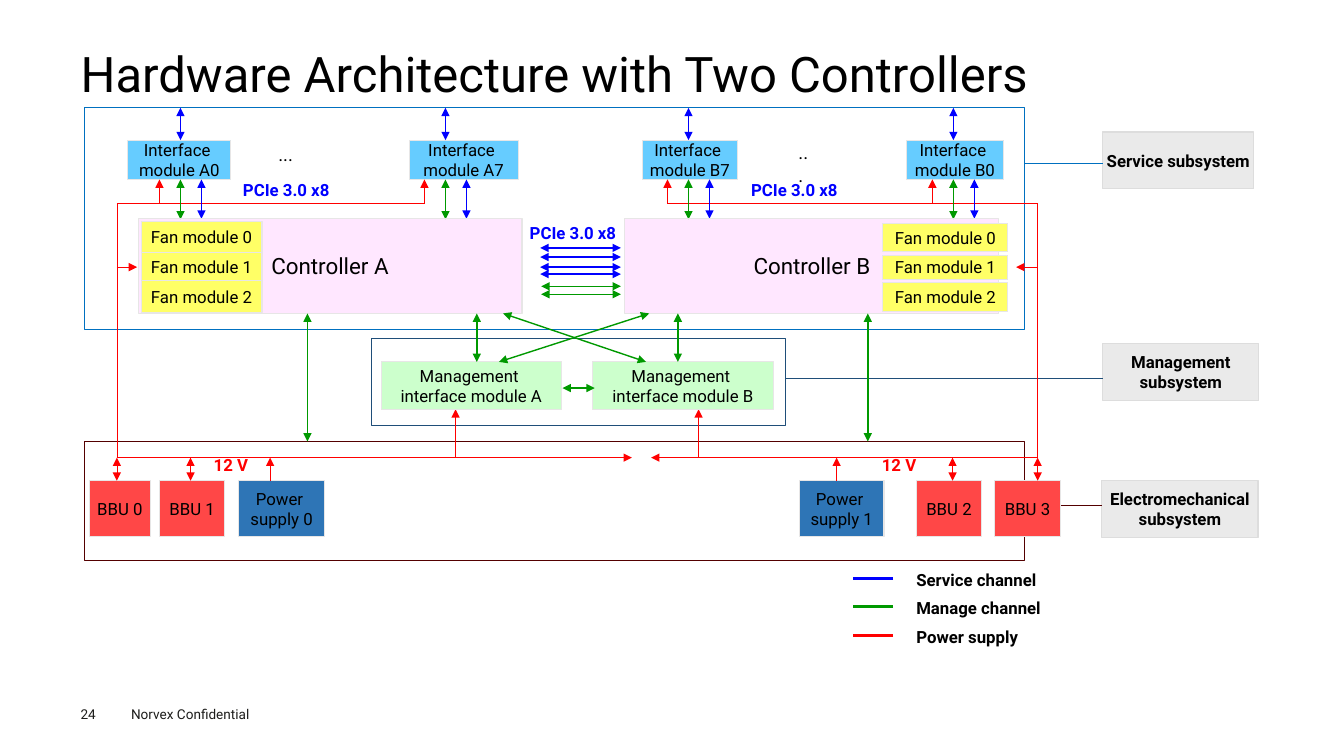
"""Build the slide on hardware architecture with two controllers."""
from lxml.etree import SubElement
from pptx import Presentation
from pptx.dml.color import RGBColor
from pptx.enum.shapes import MSO_CONNECTOR, MSO_SHAPE
from pptx.enum.text import MSO_ANCHOR, PP_ALIGN
from pptx.oxml.ns import qn
from pptx.util import Pt

BLUE, GREEN, RED = "0000FF", "009900", "FF0000"
SERVICE, MANAGEMENT, ELECTRO = "0070C0", "1F4E79", "540000"
TIP = ("tailEnd",)
BOTH = ("headEnd", "tailEnd")


def rgb(value):
    return RGBColor.from_string(value)


class Diagram:
    font_format = {"name": "Roboto", "size": 12, "bold": False}

    def __init__(self, slide):
        self.shapes = slide.shapes

    def fill_text(self, frame, text, color="000000", align=PP_ALIGN.CENTER, spacing=1,
                  anchor=MSO_ANCHOR.MIDDLE, inset=(0, 0), **font_format):
        side, end = inset
        frame_format = {"word_wrap": True, "vertical_anchor": anchor,
                        "margin_left": Pt(side), "margin_right": Pt(side),
                        "margin_top": Pt(end), "margin_bottom": Pt(end)}
        for name, value in frame_format.items():
            setattr(frame, name, value)
        for index, wording in enumerate(text.split("\n")):
            paragraph = frame.paragraphs[0] if index == 0 else frame.add_paragraph()
            paragraph.alignment = align
            paragraph.line_spacing = spacing
            run = paragraph.add_run()
            run.text = wording
            for name, value in {**self.font_format, **font_format}.items():
                setattr(run.font, name, Pt(value) if name == "size" else value)
            run.font.color.rgb = rgb(color)

    def box(self, left, top, width, height, text="", fill=None, line="E7E6E6",
            weight=0.75, alpha=None, **text_format):
        block = self.shapes.add_shape(MSO_SHAPE.RECTANGLE, Pt(left), Pt(top),
                                      Pt(width), Pt(height))
        block.shadow.inherit = False
        block.line.color.rgb = rgb(line)
        block.line.width = Pt(weight)
        if fill:
            block.fill.solid()
            block.fill.fore_color.rgb = rgb(fill)
        else:
            block.fill.background()
        if alpha:
            tone = block._element.spPr.find(qn("a:solidFill"))[0]
            SubElement(tone, qn("a:alpha"), val=str(alpha * 1000))
        if text:
            self.fill_text(block.text_frame, text, **text_format)

    def text(self, left, top, width, height, text, **text_format):
        label = self.shapes.add_textbox(Pt(left), Pt(top), Pt(width), Pt(height))
        self.fill_text(label.text_frame, text, **text_format)

    def line(self, x1, y1, x2, y2, color, weight=0.5, ends=()):
        link = self.shapes.add_connector(MSO_CONNECTOR.STRAIGHT,
                                         Pt(x1), Pt(y1), Pt(x2), Pt(y2))
        link.line.color.rgb = rgb(color)
        link.line.width = Pt(weight)
        outline = link._element.spPr.find(qn("a:ln"))
        for end in ends:
            SubElement(outline, qn(f"a:{end}"), type="triangle")
        SubElement(link._element.spPr, qn("a:effectLst"))


def add_frames(diagram):
    frames = [(60.5, 77, 671, 158.4, SERVICE), (265, 242, 296, 62, MANAGEMENT),
              (60.5, 315.4, 671, 85, ELECTRO)]
    for left, top, width, height, color in frames:
        diagram.box(left, top, width, height, line=color, weight=0.5)
    subsystems = [
        ("Service subsystem", 787.7, 94.3, 108, 116.6, 731.5, SERVICE),
        ("Management\nsubsystem", 787.7, 245.5, 111.6, 270, 561, MANAGEMENT),
        ("Electromechanical subsystem", 787, 343.4, 111.6, 360.7, 757.4, ELECTRO)]
    for name, left, top, width, link_y, link_end, color in subsystems:
        diagram.box(left, top, width, 40.7, name, "EAEAEA", "DDDDDD", bold=True)
        diagram.line(left, link_y, link_end, link_y, color)


def add_power(diagram):
    bus, top_bus = 326.9, 145.4
    for riser, inner, feed_end, control_tip in [(83.5, 451.4, 303.1, 97.9),
                                                (741.2, 465.1, 476.6, 725.8)]:
        diagram.line(riser, bus, inner, bus, RED, ends=TIP)
        diagram.line(riser, bus, riser, top_bus, RED)
        diagram.line(riser, top_bus, feed_end, top_bus, RED)
        diagram.line(riser, 190.8, control_tip, 190.8, RED, ends=TIP)
    for feed in (325.4, 499):
        diagram.line(feed, bus, feed, 292.3, RED, ends=TIP)
    units = [("BBU 0", 64.1, 43.2, 83.5), ("BBU 1", 113.8, 46.8, 136.1),
             ("Power \nsupply 0", 170.6, 61.2, 193),
             ("Power \nsupply 1", 571, 60.5, 597.6),
             ("BBU 2", 654.5, 46.8, 680.4), ("BBU 3", 710.6, 46.8, 741.2)]
    for name, left, width, riser in units:
        battery = name.startswith("BBU")
        diagram.box(left, 343.4, width, 39.6, name,
                    "FF4747" if battery else "2E75B6", inset=(2.9, 5))
        diagram.line(riser, 343.4, riser, bus, RED, ends=BOTH if battery else TIP)


def add_controllers(diagram):
    sides = [("Controller A", 98.6, 274.3, 100.8, 86.4, 190.5, (22.3, 20.2, 22.3)),
             ("Controller B", 446.4, 267.1, 630.7, 89.3, 190.9, (20.2, 17.3, 20.2))]
    for name, left, width, fan_left, fan_width, middle, heights in sides:
        diagram.box(left, 156.2, width, 67.7, name, "FFCCFF", alpha=46, size=16)
        for fan in (0, 2, 1):
            top = middle + 21.3 * (fan - 1) - heights[fan] / 2
            diagram.box(fan_left, top, fan_width, heights[fan], f"Fan module {fan}",
                        "FFFF66", inset=(2.9, 5))
    for y in (177.1, 183.6, 190.8, 195.8):
        diagram.line(443.5, y, 385.9, y, BLUE, 1, BOTH)
    for y in (204.5, 210.2):
        diagram.line(443.5, y, 386.6, y, GREEN, 1, BOTH)


def add_interfaces(diagram):
    modules = [("A0", 91.4, 73.4, 128.9), ("A7", 292.3, 77.8, 318.2),
               ("B7", 458.6, 68.4, 491.8), ("B0", 647.3, 69.8, 681)]
    offset = 15
    for name, left, width, port in modules:
        diagram.box(left, 100.1, width, 28.1, f"Interface \nmodule {name}", "66CCFF")
        diagram.line(port, 77, port, 100.1, BLUE, ends=BOTH)
        diagram.line(port, 156.7, port, 128.2, GREEN, 1, BOTH)
        diagram.line(port + offset, 128.2, port + offset, 156.2, BLUE, ends=BOTH)
        diagram.line(port - offset, 145.4, port - offset, 128.2, RED, ends=TIP)


def add_management(diagram):
    for name, left in (("A", 272.2), ("B", 423.4)):
        diagram.box(left, 258.5, 128.9, 33.8, f"Management \ninterface module {name}",
                    "CCFFCC", inset=(0, 5))
    links = [(219.6, 315.4, 219.6, 223.9), (619.9, 315.4, 619.9, 223.9),
             (340.6, 258.5, 340.6, 223.9), (484.2, 258.5, 484.2, 223.9),
             (356.4, 258.5, 463.7, 223.9), (461.5, 258.5, 359.3, 223.9),
             (401.8, 277.2, 424.8, 277.2)]
    for link in links:
        diagram.line(*link, GREEN, 1, BOTH)


def add_labels(diagram):
    labels = [("PCIe 3.0 x8", 157.7, 118.1, 93.6, BLUE, 1.4),
              ("PCIe 3.0 x8", 520.6, 118.1, 93.6, BLUE, 1.4),
              ("PCIe 3.0 x8", 363.6, 154.8, 91.4, BLUE, 1),
              ("12 V", 142.6, 315, 44.6, RED, 1.4),
              ("12 V", 615.6, 315, 53.3, RED, 1.4)]
    for wording, left, top, width, color, spacing in labels:
        diagram.text(left, top, width, 22.3, wording, color=color, spacing=spacing,
                     anchor=MSO_ANCHOR.TOP, inset=(0, 4.3), bold=True)
    for left, top, width in ((189.4, 97.2, 41.8), (560.9, 95.8, 27.4)):
        diagram.text(left, top, width, 25.9, "...", align=PP_ALIGN.LEFT,
                     anchor=MSO_ANCHOR.TOP, inset=(9.4, 5), size=13.3)
    channels = [("Service channel", BLUE), ("Manage channel", GREEN),
                ("Power supply", RED)]
    for row, (name, color) in enumerate(channels):
        y = 413.3 + 20.2 * row
        diagram.line(637.9, y, 609.1, y, color, 2.25)
        diagram.text(645.1, y - 16.4, 132, 31.7, name, align=PP_ALIGN.LEFT,
                     spacing=1.4, anchor=MSO_ANCHOR.TOP, inset=(9.4, 4.3), bold=True)


def main():
    presentation = Presentation()
    presentation.slide_width, presentation.slide_height = Pt(960), Pt(540)
    diagram = Diagram(presentation.slides.add_slide(presentation.slide_layouts[6]))
    diagram.text(57.6, 35.3, 844.6, 38.9, "Hardware Architecture with Two Controllers",
                 align=PP_ALIGN.LEFT, spacing=0.9, size=35)
    add_frames(diagram)
    add_power(diagram)
    add_interfaces(diagram)
    add_controllers(diagram)
    add_management(diagram)
    add_labels(diagram)
    for wording, left, width in (("24", 57.6, 30), ("Norvex Confidential", 93.6, 110)):
        diagram.text(left, 504, width, 11.5, wording, color="1D1D1B",
                     align=PP_ALIGN.LEFT, size=9.7)
    presentation.save("out.pptx")


if __name__ == "__main__":
    main()
